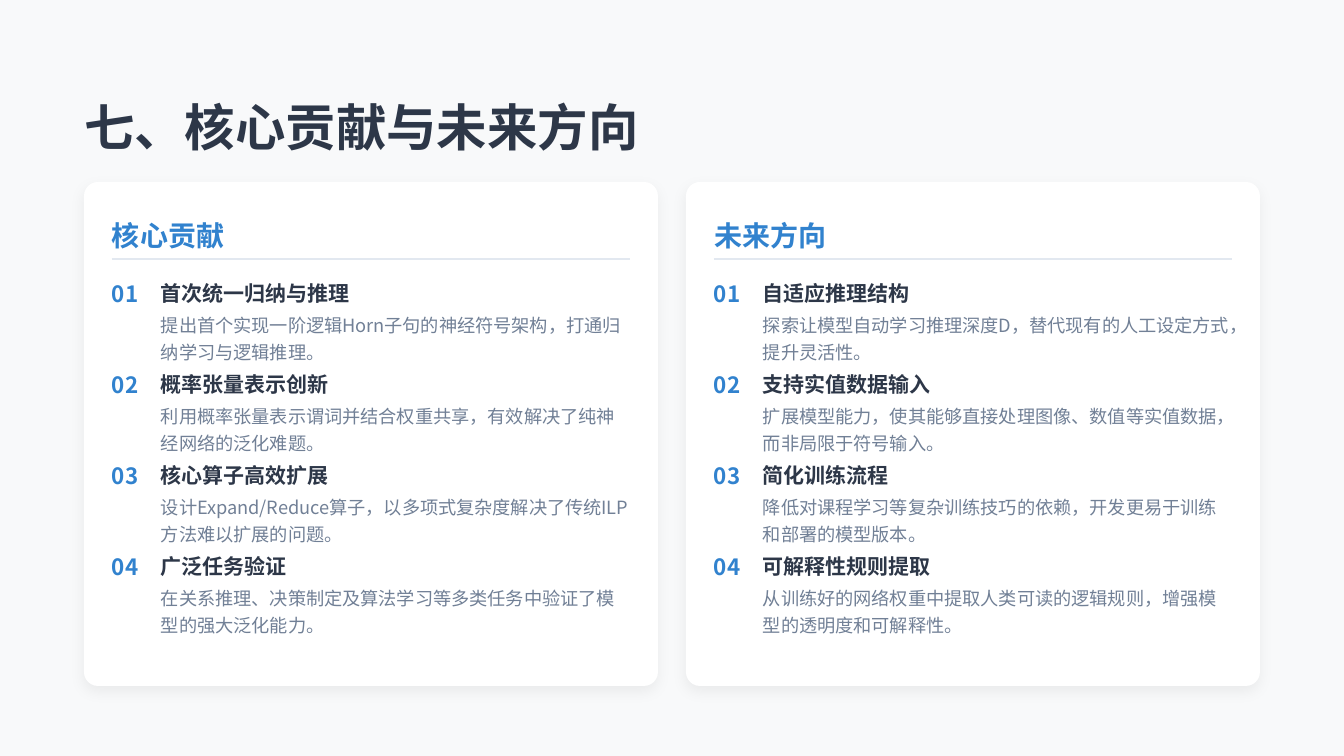
"""Build the slide on core contributions and future directions."""
from lxml import etree
from pptx import Presentation
from pptx import util as u
from pptx.dml.color import RGBColor
from pptx.enum import shapes, text
from pptx.oxml.ns import qn

FONT = "Noto Sans CJK SC"
DARK, BLUE, GREY, RULE = "2D3748", "3182CE", "718096", "E2E8F0"
CARD_W, CARD_H, PAD = 410, 360, 20
ITEM_STEP, TEXT_INDENT = 65, 35

CARDS = [
    ("核心贡献", [
        ("首次统一归纳与推理", "提出首个实现一阶逻辑Horn子句的神经符号架构，打通归纳学习与逻辑推理。"),
        ("概率张量表示创新", "利用概率张量表示谓词并结合权重共享，有效解决了纯神经网络的泛化难题。"),
        ("核心算子高效扩展", "设计Expand/Reduce算子，以多项式复杂度解决了传统ILP方法难以扩展的问题。"),
        ("广泛任务验证", "在关系推理、决策制定及算法学习等多类任务中验证了模型的强大泛化能力。"),
    ]),
    ("未来方向", [
        ("自适应推理结构", "探索让模型自动学习推理深度D，替代现有的人工设定方式，提升灵活性。"),
        ("支持实值数据输入", "扩展模型能力，使其能够直接处理图像、数值等实值数据，而非局限于符号输入。"),
        ("简化训练流程", "降低对课程学习等复杂训练技巧的依赖，开发更易于训练和部署的模型版本。"),
        ("可解释性规则提取", "从训练好的网络权重中提取人类可读的逻辑规则，增强模型的透明度和可解释性。"),
    ]),
]


def paint(color_format, color):
    color_format.rgb = RGBColor.from_string(color)


def write(sp, content, size, color, bold):
    tf = sp.text_frame
    tf.text = content
    tf.word_wrap = True
    tf.auto_size = text.MSO_AUTO_SIZE.NONE
    tf.vertical_anchor = text.MSO_ANCHOR.MIDDLE
    tf.margin_left = tf.margin_right = tf.margin_top = tf.margin_bottom = 0
    p = tf.paragraphs[0]
    p.alignment = text.PP_ALIGN.LEFT
    p.line_spacing = 1.25
    r = p.runs[0]
    r.font.size, r.font.bold, r.font.name = u.Pt(size), bold, FONT
    paint(r.font.color, color)
    etree.SubElement(r.font._element, qn("a:ea"), typeface=FONT)


def add_title(s, content):
    sp = s.shapes.title
    sp.left, sp.top, sp.width, sp.height = map(u.Pt, (60, 60, 840, 50))
    write(sp, content, 36, DARK, True)


def add_text(s, x, y, w, h, content, size, color, bold=True):
    sp = s.shapes.add_textbox(*map(u.Pt, (x, y, w, h)))
    write(sp, content, size, color, bold)


def add_panel(s, x, y):
    sp = s.shapes.add_shape(shapes.MSO_SHAPE.ROUNDED_RECTANGLE,
                            *map(u.Pt, (x, y, CARD_W, CARD_H)))
    sp.adjustments[0] = 10 / CARD_H
    sp.fill.solid()
    paint(sp.fill.fore_color, "FFFFFF")
    sp.line.fill.background()
    sp.shadow.inherit = False
    effects = sp._element.spPr.find(qn("a:effectLst"))
    shadow = etree.SubElement(effects, qn("a:outerShdw"), blurRad=str(u.Pt(10)),
                              dist=str(u.Pt(4)), dir="5400000",
                              algn="ctr", rotWithShape="0")
    shade = etree.SubElement(shadow, qn("a:srgbClr"), val="000000")
    etree.SubElement(shade, qn("a:alpha"), val="5000")


def add_rule(s, x, y, w):
    line = s.shapes.add_connector(shapes.MSO_CONNECTOR.STRAIGHT,
                                  *map(u.Pt, (x, y, x + w, y)))
    line.line.width = u.Pt(1)
    paint(line.line.color, RULE)
    etree.SubElement(line._element.spPr, qn("a:effectLst"))


def add_item(s, x, y, w, number, heading, detail):
    text_x, text_w = x + TEXT_INDENT, w - TEXT_INDENT
    add_text(s, x, y, 30, 24, f"{number:02d}", 16, BLUE)
    add_text(s, text_x, y, text_w, 24, heading, 15, DARK)
    add_text(s, text_x, y + 25, text_w, 40, detail, 13, GREY, bold=False)


def add_card(s, x, y, heading, items):
    inner_x, inner_w = x + PAD, CARD_W - 2 * PAD
    add_panel(s, x, y)
    add_text(s, inner_x, y + PAD, inner_w, 30, heading, 20, BLUE)
    add_rule(s, inner_x, y + 55, inner_w)
    for i, (name, detail) in enumerate(items):
        add_item(s, inner_x, y + 65 + i * ITEM_STEP, inner_w, i + 1, name, detail)


def main():
    prs = Presentation()
    prs.slide_width, prs.slide_height = u.Pt(960), u.Pt(540)
    s = prs.slides.add_slide(prs.slide_layouts[5])
    s.background.fill.solid()
    paint(s.background.fill.fore_color, "F8F9FA")
    add_title(s, "七、核心贡献与未来方向")
    for i, (heading, items) in enumerate(CARDS):
        add_card(s, 60 + i * (CARD_W + 20), 130, heading, items)
    prs.save("out.pptx")


if __name__ == "__main__":
    main()
